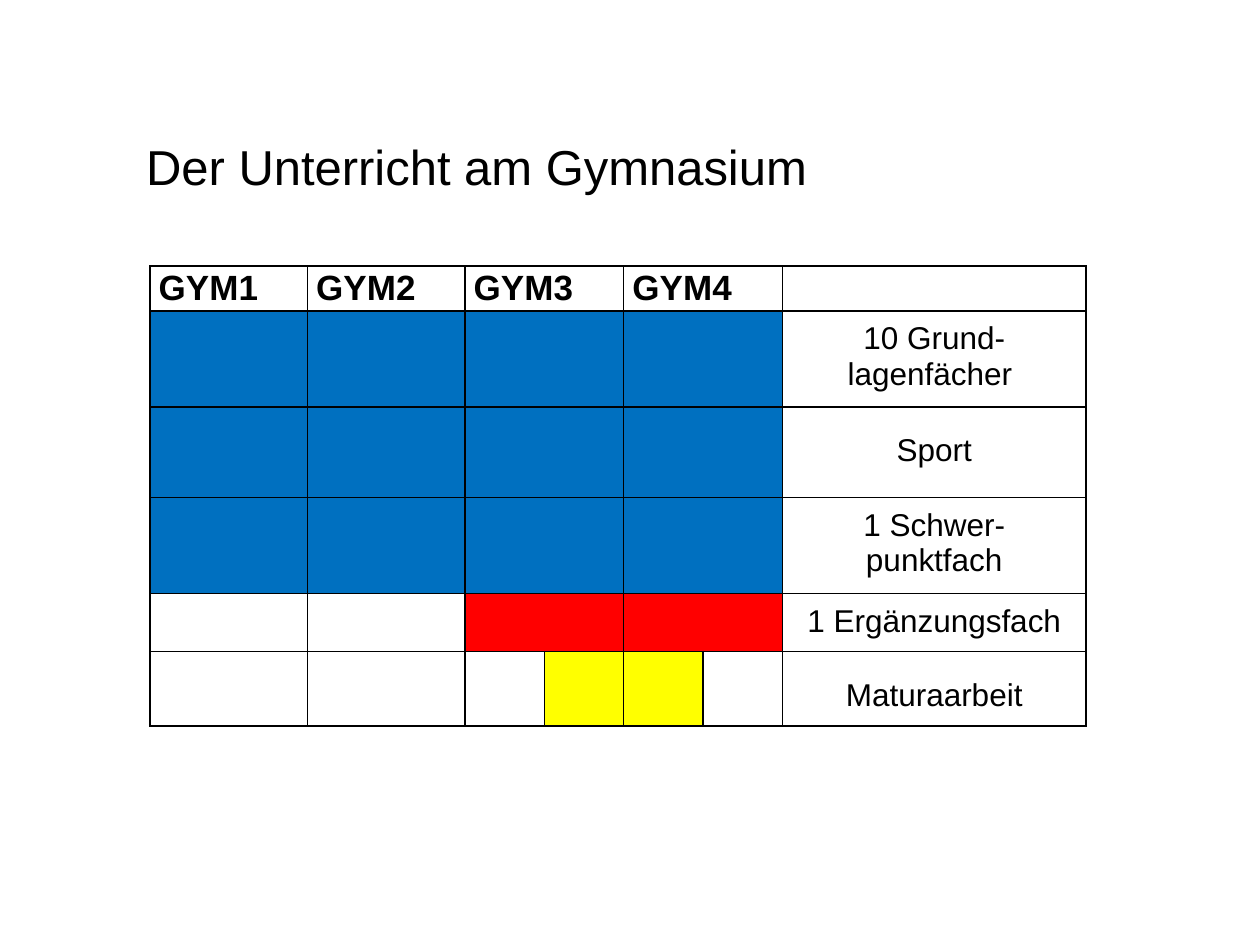
from dataclasses import dataclass

from lxml.etree import SubElement
from pptx import Presentation
from pptx.dml.color import RGBColor
from pptx.enum.text import MSO_ANCHOR, PP_ALIGN
from pptx.oxml.ns import qn
from pptx.table import Table, _Cell as Cell
from pptx.util import Inches, Pt

BLACK = RGBColor(0x00, 0x00, 0x00)
WHITE = RGBColor(0xFF, 0xFF, 0xFF)
BLUE = RGBColor(0x00, 0x70, 0xC0)
RED = RGBColor(0xFF, 0x00, 0x00)
YELLOW = RGBColor(0xFF, 0xFF, 0x00)

FONT = "Arial"
YEARS = ["GYM1", "GYM2", "GYM3", "GYM4"]
YEAR_COLUMNS = [0, 1, 2, 4]
SPLIT_COLUMNS = [2, 4]
LABEL_COLUMN = 6
COLUMN_WIDTHS = [1.25, 1.25] + [0.63] * 4 + [2.41]
HEADER_HEIGHT = 0.36


@dataclass
class SubjectRow:
    label: str
    height: float
    color: RGBColor
    filled_columns: list[int]
    top_margin: float = 0.08
    halved: bool = False


SUBJECTS = [
    SubjectRow("10 Grund-\vlagenfächer ", 0.76, BLUE, YEAR_COLUMNS),
    SubjectRow("Sport", 0.72, BLUE, YEAR_COLUMNS, top_margin=0.21),
    SubjectRow("1 Schwer-\vpunktfach", 0.76, BLUE, YEAR_COLUMNS),
    SubjectRow("1 Ergänzungsfach", 0.46, RED, SPLIT_COLUMNS),
    SubjectRow("Maturaarbeit", 0.59, YELLOW, [3, 4], top_margin=0.21, halved=True),
]


def set_fill(cell: Cell, color: RGBColor) -> None:
    cell.fill.solid()
    cell.fill.fore_color.rgb = color


def format_blank_cell(cell: Cell) -> None:
    """Give a cell black borders, a white fill and no vertical margins."""
    cell.margin_left = cell.margin_right = Inches(0.07)
    cell.margin_top = cell.margin_bottom = 0
    properties = cell._tc.get_or_add_tcPr()
    for side in ("a:lnL", "a:lnR", "a:lnT", "a:lnB"):
        line = SubElement(properties, qn(side), w=str(Pt(1)))
        SubElement(SubElement(line, qn("a:solidFill")), qn("a:srgbClr"), val=str(BLACK))
    set_fill(cell, WHITE)


def write_cell(cell: Cell, text: str, size: int, bold: bool, alignment: PP_ALIGN) -> None:
    cell.text = text
    paragraph = cell.text_frame.paragraphs[0]
    paragraph.alignment = alignment
    font = paragraph.font
    font.name, font.size, font.bold = FONT, Pt(size), bold
    font.color.rgb = BLACK


def merge_halves(table: Table, row: int) -> None:
    for column in SPLIT_COLUMNS:
        table.cell(row, column).merge(table.cell(row, column + 1))


def add_header(table: Table) -> None:
    merge_halves(table, 0)
    for column, year in zip(YEAR_COLUMNS, YEARS):
        cell = table.cell(0, column)
        write_cell(cell, year, 20, True, PP_ALIGN.JUSTIFY)
        cell.text_frame.paragraphs[0].line_spacing = 1.07


def add_subject(table: Table, row: int, subject: SubjectRow) -> None:
    if not subject.halved:
        merge_halves(table, row)
    for column in subject.filled_columns:
        set_fill(table.cell(row, column), subject.color)
    label_cell = table.cell(row, LABEL_COLUMN)
    label_cell.margin_top = Inches(subject.top_margin)
    label_cell.margin_bottom = Inches(0.08)
    write_cell(label_cell, subject.label, 18, False, PP_ALIGN.CENTER)


def add_title(slide) -> None:
    box = slide.shapes.add_textbox(Inches(1.11), Inches(1.03), Inches(8.2), Inches(0.57))
    frame = box.text_frame
    frame.word_wrap = True
    frame.vertical_anchor = MSO_ANCHOR.MIDDLE
    frame.margin_left = frame.margin_right = Inches(0.05)
    frame.margin_top = frame.margin_bottom = Inches(0.05)
    paragraph = frame.paragraphs[0]
    paragraph.text = "Der Unterricht am Gymnasium"
    paragraph.font.name, paragraph.font.size = FONT, Pt(28)
    paragraph.font.color.rgb = BLACK


def add_timetable(slide) -> None:
    heights = [HEADER_HEIGHT] + [subject.height for subject in SUBJECTS]
    table = slide.shapes.add_table(
        len(heights), len(COLUMN_WIDTHS), Inches(1.19), Inches(2.11),
        Inches(sum(COLUMN_WIDTHS)), Inches(sum(heights)),
    ).table
    table.first_row = table.horz_banding = False
    for column, width in zip(table.columns, COLUMN_WIDTHS):
        column.width = Inches(width)
    for row, height in zip(table.rows, heights):
        row.height = Inches(height)
    for cell in table.iter_cells():
        format_blank_cell(cell)
    add_header(table)
    for row, subject in enumerate(SUBJECTS, start=1):
        add_subject(table, row, subject)


def main() -> None:
    presentation = Presentation()
    presentation.slide_width, presentation.slide_height = Inches(10), Inches(7.5)
    slide = presentation.slides.add_slide(presentation.slide_layouts[6])
    add_title(slide)
    add_timetable(slide)
    presentation.save("out.pptx")


if __name__ == "__main__":
    main()
